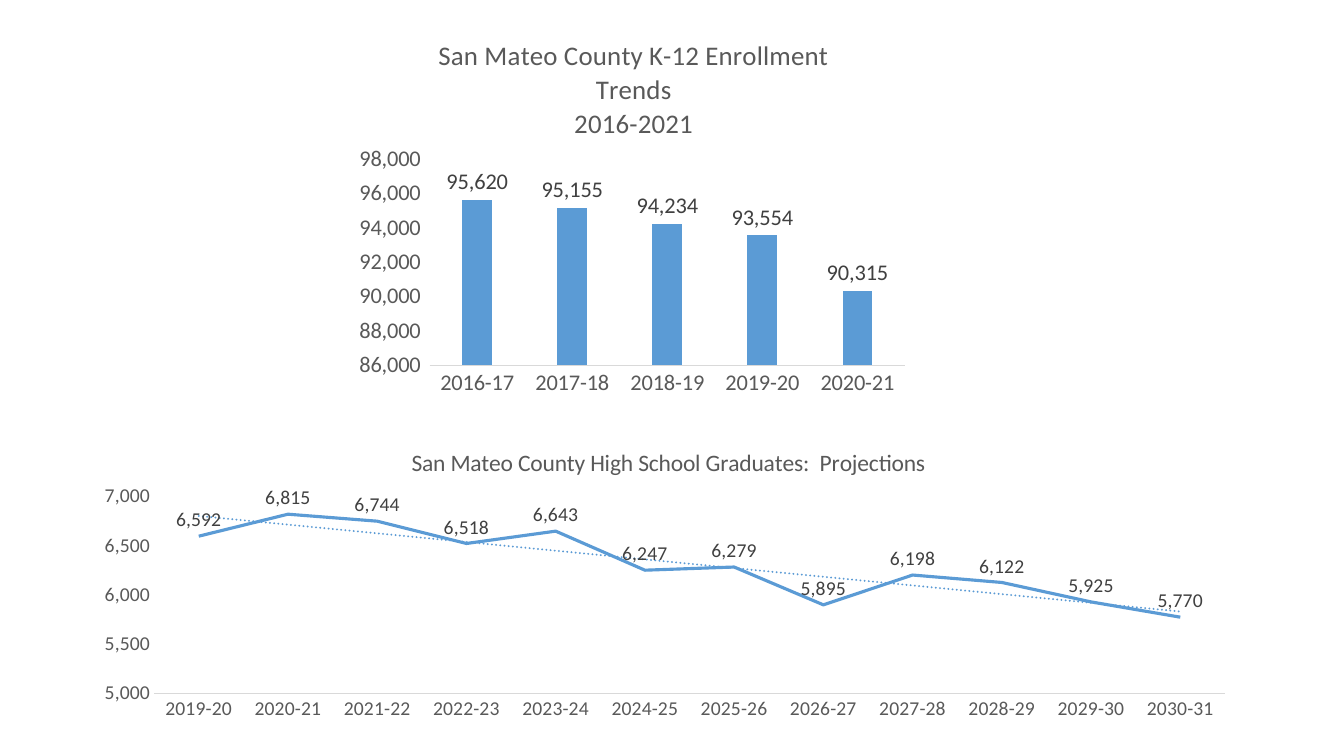
from lxml.etree import fromstring
from pptx import Presentation
from pptx.chart.data import CategoryChartData
from pptx.dml.color import RGBColor
from pptx.enum.chart import XL_CHART_TYPE as ChartType
from pptx.enum.chart import XL_LABEL_POSITION as LabelPosition
from pptx.enum.chart import XL_MARKER_STYLE as MarkerStyle
from pptx.enum.chart import XL_TICK_MARK as TickMark
from pptx.util import Inches, Pt

BLUE = RGBColor(0x5B, 0x9B, 0xD5)
GRAY = RGBColor(0x59, 0x59, 0x59)
DARK = RGBColor(0x40, 0x40, 0x40)
PALE = RGBColor(0xD9, 0xD9, 0xD9)
FONT = "Calibri"
COUNT_FORMAT = "#,##0"
ACCOUNT_FORMAT = '_(* #,##0_);_(* \\(#,##0\\);_(* "-"??_);_('
NAMESPACES = (
    'xmlns:c="http://schemas.openxmlformats.org/drawingml/2006/chart" '
    'xmlns:a="http://schemas.openxmlformats.org/drawingml/2006/main"'
)
ENROLLMENT = [95620, 95155, 94234, 93554, 90315]
GRADUATES = [6592, 6815, 6744, 6518, 6643, 6247,
             6279, 5895, 6198, 6122, 5925, 5770]


def school_years(first, count):
    """Return labels such as 2016-17 for consecutive school years."""
    return [f"{year}-{(year + 1) % 100}" for year in range(first, first + count)]


def style_font(font, size, color):
    """Apply the slide's plain lettering to a font."""
    font.name, font.size, font.bold = FONT, Pt(size), False
    font.color.rgb = color


def make_layout(shares, inner=False):
    """Build a manual layout from shares of the chart's size."""
    names = ("x", "y", "w", "h")[:len(shares)]
    modes = "".join(f'<c:{name}Mode val="edge"/>' for name in names[:2])
    values = "".join(f'<c:{name} val="{share}"/>' for name, share in zip(names, shares))
    target = '<c:layoutTarget val="inner"/>' if inner else ""
    return fromstring(f"<c:layout {NAMESPACES}><c:manualLayout>{target}{modes}{values}"
                      "</c:manualLayout></c:layout>")


def set_layout(element, layout, index):
    """Replace an element's layout with the given one."""
    for old in element.xpath("c:layout"):
        element.remove(old)
    element.insert(index, layout)


def add_title(chart, lines, size, corner):
    """Write the chart title with its top left corner at the given shares."""
    frame = chart.chart_title.text_frame
    frame.text = "\n".join(lines)
    for para in frame.paragraphs:
        style_font(para.font, size, GRAY)
    chart.chart_title.include_in_layout = False
    set_layout(frame._txBody.getparent().getparent(), make_layout(corner), 1)


def style_axes(chart, size, scale, number_format):
    """Format both axes, with the value scale as low, high and step."""
    for axis in (chart.category_axis, chart.value_axis):
        axis.has_major_gridlines = False
        axis.major_tick_mark = axis.minor_tick_mark = TickMark.NONE
        style_font(axis.tick_labels.font, size, GRAY)
    chart.category_axis.format.line.color.rgb = PALE
    chart.category_axis.format.line.width = Pt(0.75)
    values = chart.value_axis
    values.format.line.fill.background()
    values.minimum_scale, values.maximum_scale, values.major_unit = scale
    values.tick_labels.number_format = number_format
    values.tick_labels.number_format_is_linked = False


def label_series(series, size, position, number_format):
    """Show the value beside each point."""
    labels = series.data_labels
    labels.show_value = True
    labels.position = position
    labels.number_format = number_format
    labels.number_format_is_linked = False
    style_font(labels.font, size, DARK)


def add_trend(series):
    """Add a dotted linear trend line to a series."""
    trend = fromstring(
        f'<c:trendline {NAMESPACES}><c:spPr><a:ln w="{Pt(1.5)}" cap="rnd"><a:solidFill>'
        f'<a:srgbClr val="{BLUE}"/></a:solidFill><a:prstDash val="sysDot"/></a:ln></c:spPr>'
        '<c:trendlineType val="linear"/><c:dispRSqr val="0"/><c:dispEq val="0"/></c:trendline>'
    )
    series._element.xpath("c:cat")[0].addprevious(trend)


def add_plain_chart(page, box, kind, first_year, values, size, plot_area):
    """Add a one-series chart in the box with its plot at the given shares."""
    data = CategoryChartData(number_format=COUNT_FORMAT)
    data.categories = school_years(first_year, len(values))
    data.add_series("Series 1", values)
    chart = page.shapes.add_chart(kind, *map(Inches, box), data).chart
    chart.has_legend = False
    style_font(chart.font, size, GRAY)
    chart.plots[0].vary_by_categories = False
    set_layout(chart._chartSpace.chart.plotArea, make_layout(plot_area, inner=True), 0)
    return chart


def add_enrollment(page, box):
    """Draw the enrollment columns in the box."""
    chart = add_plain_chart(page, box, ChartType.COLUMN_CLUSTERED, 2016, ENROLLMENT, 16,
                            (0.15, 0.37, 0.83, 0.53))
    add_title(chart, ["San Mateo County K-12 Enrollment Trends", "2016-2021"],
              19.2, (0.16, 0.05))
    style_axes(chart, 16, (86000, 98000, 2000), ACCOUNT_FORMAT)
    plot = chart.plots[0]
    plot.gap_width, plot.overlap = 219, -27
    columns = plot.series[0]
    columns.format.fill.solid()
    columns.format.fill.fore_color.rgb = BLUE
    label_series(columns, 16, LabelPosition.OUTSIDE_END, ACCOUNT_FORMAT)


def add_graduates(page, box):
    """Draw the graduate projection line and its trend in the box."""
    chart = add_plain_chart(page, box, ChartType.LINE, 2019, GRADUATES, 14,
                            (0.063, 0.237, 0.918, 0.652))
    add_title(chart, ["San Mateo County High School Graduates:  Projections"],
              16.8, (0.28, 0.06))
    style_axes(chart, 14, (5000, 7000, 500), COUNT_FORMAT)
    line = chart.plots[0].series[0]
    line.smooth = False
    line.marker.style = MarkerStyle.NONE
    line.format.line.color.rgb = BLUE
    line.format.line.width = Pt(2.25)
    label_series(line, 14, LabelPosition.ABOVE, COUNT_FORMAT)
    add_trend(line)


def main():
    """Build the slide and save the deck."""
    deck = Presentation()
    deck.slide_width, deck.slide_height = Inches(13.33), Inches(7.5)
    page = deck.slides.add_slide(deck.slide_layouts[6])
    add_enrollment(page, (3.41, 0.15, 5.68, 3.86))
    add_graduates(page, (0.8, 4.21, 11.57, 3))
    deck.save("out.pptx")


if __name__ == "__main__":
    main()
